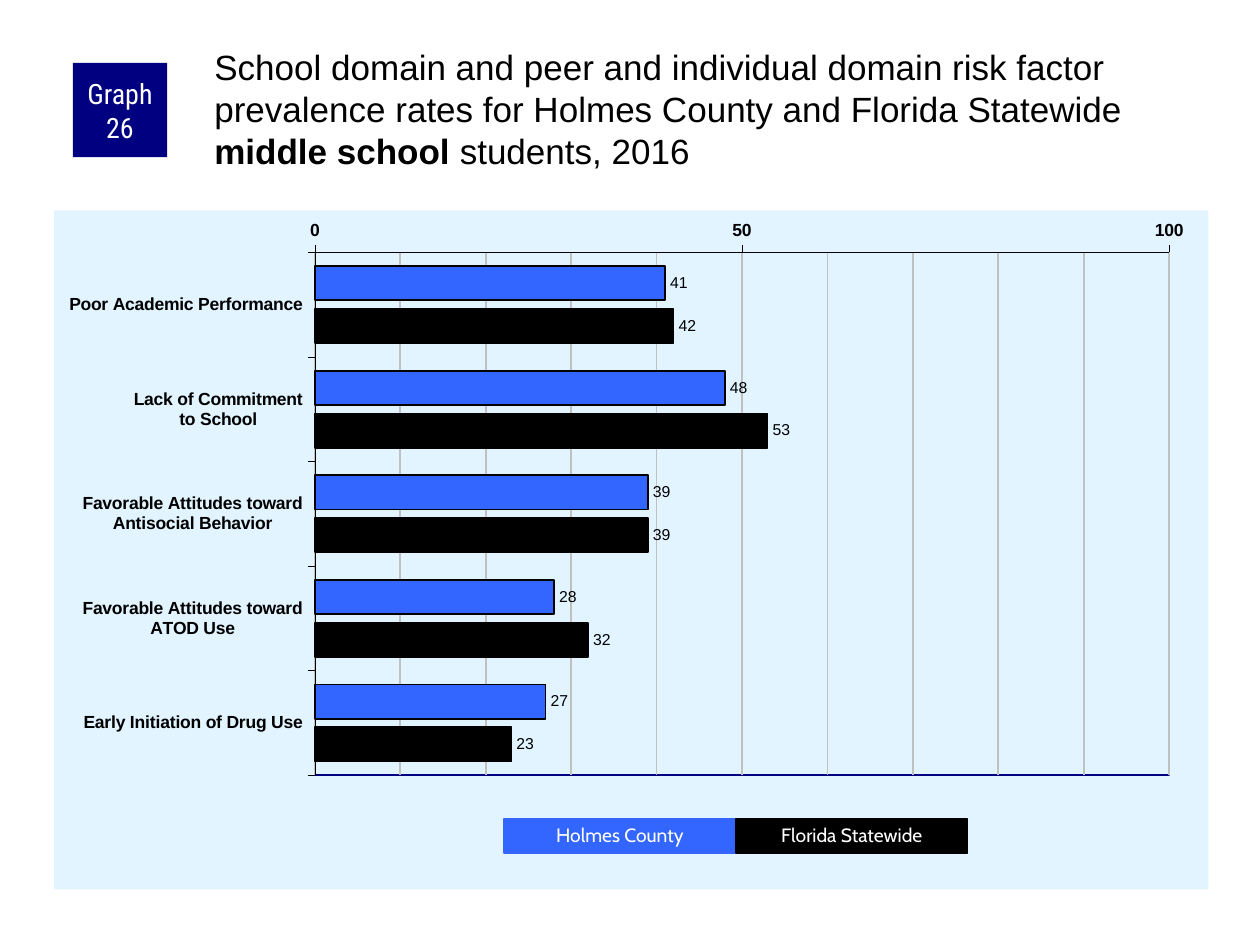
from pptx import Presentation
from pptx.chart.data import CategoryChartData
from pptx.dml.color import RGBColor
from pptx.enum.chart import XL_AXIS_CROSSES, XL_CHART_TYPE, XL_LABEL_POSITION, XL_TICK_MARK
from pptx.enum.shapes import MSO_SHAPE
from pptx.enum.text import MSO_ANCHOR, MSO_AUTO_SIZE, PP_ALIGN
from pptx.oxml import parse_xml
from pptx.oxml.ns import nsdecls, qn
from pptx.util import Cm, Pt

RECTANGLE = MSO_SHAPE.RECTANGLE
BAR_CLUSTERED = XL_CHART_TYPE.BAR_CLUSTERED
OUTSIDE_END = XL_LABEL_POSITION.OUTSIDE_END
AXIS_MAXIMUM = XL_AXIS_CROSSES.MAXIMUM
TICK_OUTSIDE, TICK_NONE = XL_TICK_MARK.OUTSIDE, XL_TICK_MARK.NONE
TOP, MIDDLE = MSO_ANCHOR.TOP, MSO_ANCHOR.MIDDLE
LEFT, CENTER = PP_ALIGN.LEFT, PP_ALIGN.CENTER
FIT_SHAPE, NO_FIT = MSO_AUTO_SIZE.SHAPE_TO_FIT_TEXT, MSO_AUTO_SIZE.NONE

NAVY, BLUE, BLACK, WHITE = "000080", "3366FF", "000000", "FFFFFF"
PALE_BLUE, GRAY = "E1F4FF", "C0C0C0"

RISK_FACTORS = [
    ("Poor Academic Performance", 41, 42),
    ("Lack of Commitment\nto School", 48, 53),
    ("Favorable Attitudes toward\nAntisocial Behavior", 39, 39),
    ("Favorable Attitudes toward\nATOD Use", 28, 32),
    ("Early Initiation of Drug Use", 27, 23),
]
REGIONS = [("Holmes County", BLUE), ("Florida Statewide", BLACK)]


def color(value):
    return RGBColor.from_string(value)


def set_font(font, name, size, value, bold=False):
    font.name, font.size, font.bold = name, Pt(size), bold
    font.color.rgb = color(value)


def set_line(line, value, width):
    line.color.rgb = color(value)
    line.width = Pt(width)


def add_box(slide, box, fill, text, font_name, size):
    shape = slide.shapes.add_shape(RECTANGLE, *map(Cm, box))
    shape.shadow.inherit = False
    shape.fill.solid()
    shape.fill.fore_color.rgb = color(fill)
    shape.text_frame.text = text
    paragraph = shape.text_frame.paragraphs[0]
    paragraph.alignment = CENTER
    set_font(paragraph.font, font_name, size, WHITE)
    return shape


def add_badge(slide, box):
    badge = add_box(slide, box, NAVY, "Graph 26", "Roboto Condensed", 16)
    badge.line.fill.background()
    frame = badge.text_frame
    frame.vertical_anchor = MIDDLE
    frame.margin_left = frame.margin_right = Cm(0.13)
    frame.margin_top = frame.margin_bottom = 0


def fill_title(slide, box):
    title = slide.shapes.title
    title.left, title.top, title.width, title.height = map(Cm, box)
    frame = title.text_frame
    frame.word_wrap = True
    frame.auto_size = NO_FIT
    frame.vertical_anchor = TOP
    frame.margin_left = frame.margin_top = Cm(0.08)
    frame.margin_right = frame.margin_bottom = 0
    paragraph = frame.paragraphs[0]
    paragraph.alignment = LEFT
    set_font(paragraph.font, "Arial", 20, BLACK)
    for text, bold in (
        ("School domain and peer and individual domain risk factor prevalence rates "
         "for Holmes County and Florida Statewide ", False),
        ("middle school", True),
        (" students, 2016", False),
    ):
        run = paragraph.add_run()
        run.text = text
        run.font.bold = bold


def shape_properties(content):
    return parse_xml(f'<c:spPr {nsdecls("c", "a")}>{content}</c:spPr>')


def solid_fill(value):
    return f'<a:solidFill><a:srgbClr val="{value}"/></a:solidFill>'


def outline(value):
    return f'<a:ln w="{Pt(1)}">{solid_fill(value)}</a:ln>'


def format_plot_area(chart, left, top, width, height):
    plot_area = chart._chartSpace.chart.plotArea
    for layout in plot_area.findall(qn("c:layout")):
        plot_area.remove(layout)
    places = {"x": left, "y": top, "w": width, "h": height}
    values = "".join(f'<c:{key} val="{value}"/>' for key, value in places.items())
    plot_area.insert(0, parse_xml(
        f'<c:layout {nsdecls("c")}><c:manualLayout><c:layoutTarget val="inner"/>'
        f'<c:xMode val="edge"/><c:yMode val="edge"/>{values}'
        '</c:manualLayout></c:layout>'))
    plot_area.append(shape_properties(f'<a:noFill/>{outline(NAVY)}'))


def format_axes(chart):
    category_axis, value_axis = chart.category_axis, chart.value_axis
    for axis in (category_axis, value_axis):
        axis.major_tick_mark, axis.minor_tick_mark = TICK_OUTSIDE, TICK_NONE
        set_font(axis.tick_labels.font, "Arial", 10, BLACK, True)
        set_line(axis.format.line, BLACK, 0.25)
    category_axis.reverse_order = True
    category_axis.crosses = AXIS_MAXIMUM
    value_axis.minimum_scale, value_axis.maximum_scale = 0, 100
    value_axis.major_unit, value_axis.minor_unit = 50, 10
    value_axis.has_major_gridlines = value_axis.has_minor_gridlines = True
    set_line(value_axis.major_gridlines.format.line, GRAY, 1)
    minor_gridlines = value_axis._element.find(qn("c:minorGridlines"))
    minor_gridlines.append(shape_properties(outline(GRAY)))


def add_risk_chart(slide, box):
    names, *columns = zip(*RISK_FACTORS)
    data = CategoryChartData()
    data.categories = names
    for (region, _), values in zip(REGIONS, columns):
        data.add_series(region, values)
    chart = slide.shapes.add_chart(BAR_CLUSTERED, *map(Cm, box), data).chart
    chart.has_legend = chart.has_title = False
    set_font(chart.font, "Arial", 11.8, BLACK)
    chart._chartSpace.chart.addnext(
        shape_properties(f'{solid_fill(PALE_BLUE)}<a:ln><a:noFill/></a:ln>'))
    format_plot_area(chart, 0.226, 0.062, 0.74, 0.77)
    format_axes(chart)
    plot = chart.plots[0]
    plot.gap_width, plot.overlap = 80, -25
    plot.vary_by_categories = False
    for series, (_, fill) in zip(plot.series, REGIONS):
        series.format.fill.solid()
        series.format.fill.fore_color.rgb = color(fill)
        set_line(series.format.line, BLACK, 1)
        labels = series.data_labels
        labels.show_value = True
        labels.position = OUTSIDE_END
        set_font(labels.font, "Arial", 9, BLACK)


def add_legend(slide, box):
    left, top, width, height = box
    key_width = width / len(REGIONS)
    for index, (region, fill) in enumerate(REGIONS):
        key_box = (left + index * key_width, top, key_width, height)
        key = add_box(slide, key_box, fill, region, "Cabin", 11)
        set_line(key.line, fill, 0.75)
        key.text_frame.auto_size = FIT_SHAPE
        key.text_frame.paragraphs[0].line_spacing = 0.9


def main():
    presentation = Presentation()
    presentation.slide_width, presentation.slide_height = Cm(25.4), Cm(19.05)
    slide = presentation.slides.add_slide(presentation.slide_layouts[5])
    add_risk_chart(slide, (1.09, 4.24, 23.27, 13.69))
    add_badge(slide, (1.47, 1.27, 1.9, 1.9))
    fill_title(slide, (4.24, 0.84, 20.12, 2.11))
    add_legend(slide, (10.16, 16.51, 9.35, 0.69))
    presentation.save("out.pptx")


if __name__ == "__main__":
    main()
